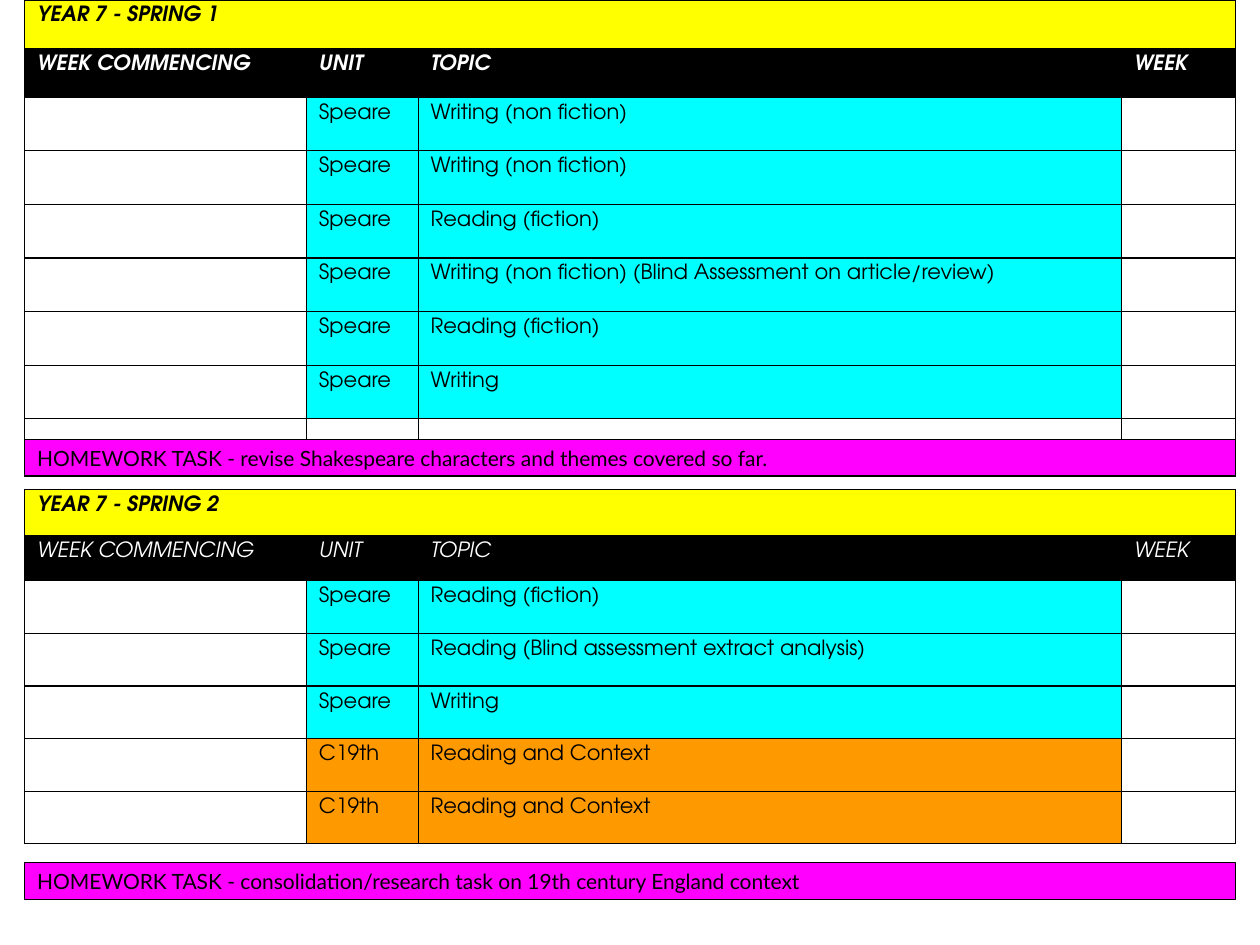
from lxml.etree import SubElement
from pptx import Presentation
from pptx.dml.color import RGBColor
from pptx.enum.shapes import MSO_SHAPE as Shape
from pptx.enum.text import MSO_ANCHOR as Anchor, PP_ALIGN as Align
from pptx.oxml.ns import qn
from pptx.util import Cm, Pt

COLORS = {
    "black": "000000",
    "white": "FFFFFF",
    "term": "FFFF00",
    "speare": "00FFFF",
    "century": "FF9900",
    "homework": "FF00FF",
}
LEFT = 0.5
COLUMN_WIDTHS = [5.68, 2.25, 14.18, 2.3]
WIDTH = sum(COLUMN_WIDTHS)
HEADINGS = ["WEEK COMMENCING", "UNIT", "TOPIC", "WEEK"]
UNIT_COLORS = {"Speare": "speare", "C19th": "century"}

SPRING_1 = [
    ("Speare", "Writing (non fiction)"),
    ("Speare", "Writing (non fiction)"),
    ("Speare", "Reading (fiction)"),
    ("Speare", "Writing (non fiction) (Blind Assessment on article/review)"),
    ("Speare", "Reading (fiction)"),
    ("Speare", "Writing"),
    ("", ""),
]
SPRING_2 = [
    ("Speare", "Reading (fiction)"),
    ("Speare", "Reading (Blind assessment extract analysis)"),
    ("Speare", "Writing"),
    ("C19th", "Reading and Context"),
    ("C19th", "Reading and Context"),
]


def rgb(name):
    return RGBColor.from_string(COLORS[name])


def write_text(text_frame, text, font="TeX Gyre Adventor", size=12,
               color="black", bold=False, italic=False):
    paragraph = text_frame.paragraphs[0]
    paragraph.alignment = Align.LEFT
    run = paragraph.add_run()
    run.text = text
    run.font.name = font
    run.font.size = Pt(size)
    run.font.color.rgb = rgb(color)
    run.font.bold = bold
    run.font.italic = italic


class PlannerSlide:
    """Holds the slide and the style shared by its elements."""

    line_width = Pt(0.75)
    side_inset = Cm(0.25)
    cell_inset = Cm(0.13)

    def __init__(self, slide):
        self.slide = slide

    def border(self, cell):
        properties = cell._tc.get_or_add_tcPr()
        for position, side in enumerate(("lnL", "lnR", "lnT", "lnB")):
            line = properties.makeelement(qn(f"a:{side}"), {"w": str(self.line_width)})
            fill = SubElement(line, qn("a:solidFill"))
            SubElement(fill, qn("a:srgbClr"), {"val": COLORS["black"]})
            properties.insert(position, line)

    def cell(self, cell, text="", fill=None, **text_format):
        cell.margin_left = cell.margin_right = self.side_inset
        cell.margin_top = cell.margin_bottom = self.cell_inset
        if fill:
            cell.fill.solid()
            cell.fill.fore_color.rgb = rgb(fill)
        else:
            cell.fill.background()
        self.border(cell)
        if text:
            write_text(cell.text_frame, text, **text_format)

    def term_table(self, top, title, weeks, row_heights, bold_headings):
        frame = self.slide.shapes.add_table(
            len(row_heights), len(COLUMN_WIDTHS),
            Cm(LEFT), Cm(top), Cm(WIDTH), Cm(sum(row_heights)))
        table = frame.table
        table.first_row = table.horz_banding = False
        for column, width in zip(table.columns, COLUMN_WIDTHS):
            column.width = Cm(width)
        for row, height in zip(table.rows, row_heights):
            row.height = Cm(height)

        # Title across all columns
        table.cell(0, 0).merge(table.cell(0, len(COLUMN_WIDTHS) - 1))
        for column in range(len(COLUMN_WIDTHS)):
            self.cell(table.cell(0, column), "" if column else title, "term",
                      bold=True, italic=True)

        # Column headings
        for column, heading in enumerate(HEADINGS):
            self.cell(table.cell(1, column), heading, "black", color="white",
                      bold=bold_headings, italic=True)

        # Weeks, with the outer columns left open
        for row, (unit, topic) in enumerate(weeks, start=2):
            fill = UNIT_COLORS.get(unit)
            self.cell(table.cell(row, 0))
            self.cell(table.cell(row, 1), unit, fill)
            self.cell(table.cell(row, 2), topic, fill)
            self.cell(table.cell(row, 3))

    def homework_bar(self, top, text):
        shape = self.slide.shapes.add_shape(
            Shape.RECTANGLE, Cm(LEFT), Cm(top), Cm(WIDTH), Cm(0.74))
        shape.shadow.inherit = False
        shape.fill.solid()
        shape.fill.fore_color.rgb = rgb("homework")
        shape.line.color.rgb = rgb("black")
        shape.line.width = self.line_width
        text_frame = shape.text_frame
        text_frame.word_wrap = True
        text_frame.vertical_anchor = Anchor.MIDDLE
        text_frame.margin_left = text_frame.margin_right = self.side_inset
        text_frame.margin_top = text_frame.margin_bottom = self.side_inset
        write_text(text_frame, text, font="Lato")


def main():
    presentation = Presentation()
    presentation.slide_width = Cm(25.4)
    presentation.slide_height = Cm(19.05)
    planner = PlannerSlide(
        presentation.slides.add_slide(presentation.slide_layouts[6]))

    # Term tables
    planner.term_table(0, "YEAR 7 - SPRING 1", SPRING_1,
                       [0.98] * 2 + [1.08] * 6 + [1.16], bold_headings=True)
    planner.term_table(9.87, "YEAR 7 - SPRING 2", SPRING_2,
                       [0.92] * 2 + [1.06] * 5, bold_headings=False)

    # Homework bars
    planner.homework_bar(
        8.86, "HOMEWORK TASK - revise Shakespeare characters and themes covered so far.")
    planner.homework_bar(
        17.39, "HOMEWORK TASK - consolidation/research task on 19th century England context")

    presentation.save("out.pptx")


if __name__ == "__main__":
    main()
